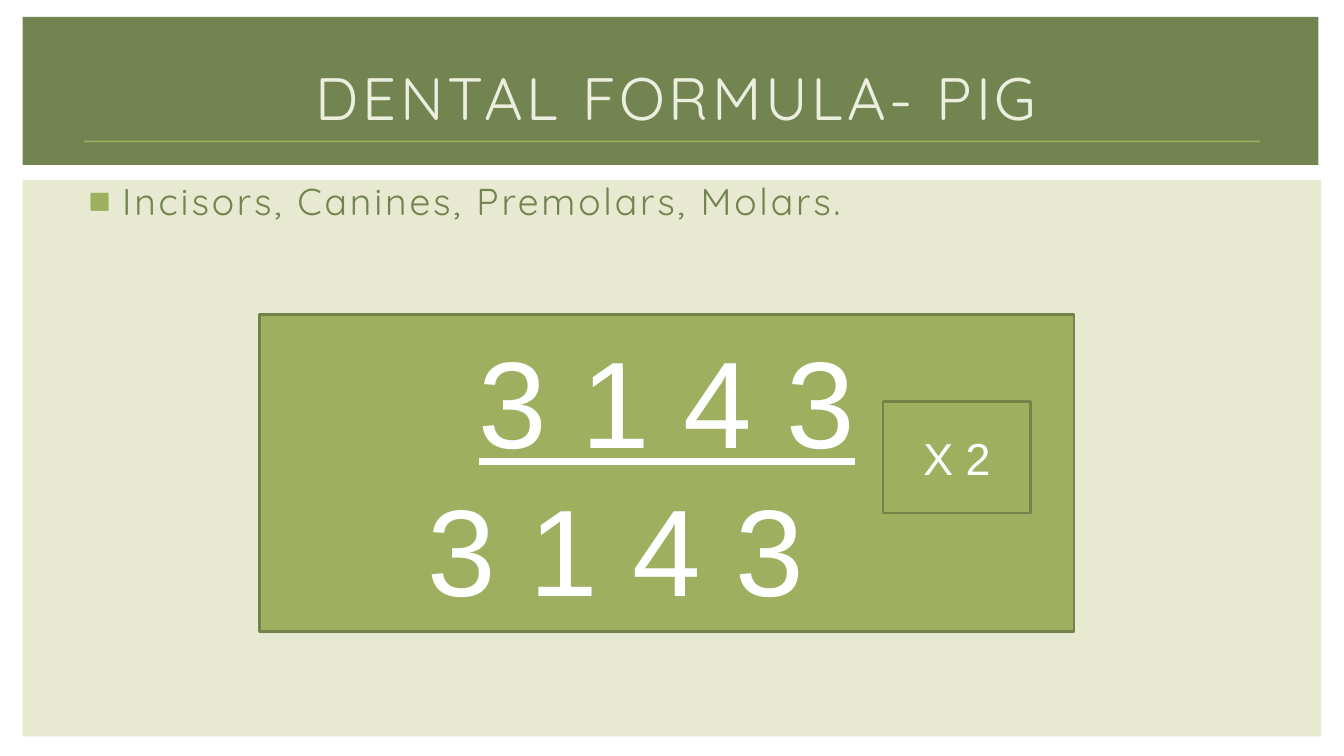
from dataclasses import dataclass

from lxml import etree
from pptx import Presentation
from pptx.dml.color import RGBColor
from pptx.enum.shapes import MSO_SHAPE
from pptx.enum.text import MSO_ANCHOR, PP_ALIGN
from pptx.oxml.ns import qn
from pptx.util import Cm, Pt

RECTANGLE = MSO_SHAPE.RECTANGLE
MIDDLE = MSO_ANCHOR.MIDDLE
TOP = MSO_ANCHOR.TOP
CENTER = PP_ALIGN.CENTER
LEFT = PP_ALIGN.LEFT


@dataclass(frozen=True)
class Theme:
    panel: str = "E8E9D1"
    band: str = "738450"
    accent: str = "9EB060"
    outline: str = "758247"
    title: str = "ECEFDF"
    white: str = "FFFFFF"
    heading_font: str = "Quicksand"
    formula_font: str = "Arial"
    title_size: int = 32
    body_size: int = 20
    formula_size: int = 66
    factor_size: int = 24
    outline_width: float = 1.5


THEME = Theme()


def add_rectangle(page, left, top, width, height, fill, line=None):
    box = page.shapes.add_shape(RECTANGLE, Cm(left), Cm(top), Cm(width), Cm(height))
    box.shadow.inherit = False
    box.fill.solid()
    box.fill.fore_color.rgb = RGBColor.from_string(fill)
    if line:
        box.line.color.rgb = RGBColor.from_string(line)
        box.line.width = Pt(THEME.outline_width)
    else:
        box.line.fill.background()
    return box


def write_text(box, text, font, size, color, align=CENTER, anchor=MIDDLE, spacing=0):
    """Fill a shape with text, one paragraph per line; spacing is in points."""
    frame = box.text_frame
    frame.word_wrap = True
    frame.vertical_anchor = anchor
    frame.text = text
    for para in frame.paragraphs:
        para.alignment = align
        for span in para.runs:
            span.font.name = font
            span.font.size = Pt(size)
            span.font.color.rgb = RGBColor.from_string(color)
            if spacing:
                span.font._element.set("spc", str(int(spacing * 100)))
    return frame.paragraphs


def add_heading_text(page, left, top, width, height, text, size, color, **layout):
    box = page.shapes.add_textbox(Cm(left), Cm(top), Cm(width), Cm(height))
    return write_text(box, text, THEME.heading_font, size, color, **layout)[0]


def set_margins(para, **margins):
    """Set paragraph margins (marL, marR, indent) given in centimetres."""
    properties = para._p.get_or_add_pPr()
    for name, length in margins.items():
        properties.set(name, str(int(Cm(length))))


def add_square_bullet(para, color):
    properties = para._p.get_or_add_pPr()
    bullet_color = etree.SubElement(properties, qn("a:buClr"))
    etree.SubElement(bullet_color, qn("a:srgbClr")).set("val", color)
    etree.SubElement(properties, qn("a:buFont")).set("typeface", THEME.formula_font)
    etree.SubElement(properties, qn("a:buChar")).set("char", "■")


def add_background(page):
    add_rectangle(page, 0.43, 3.4, 24.54, 10.52, THEME.panel)
    add_rectangle(page, 0.43, 0.32, 24.49, 2.8, THEME.band)
    add_rectangle(page, 1.59, 2.66, 22.22, 0.03, THEME.accent)


def add_formula(page):
    box = add_rectangle(page, 4.91, 5.95, 15.39, 5.99, THEME.accent, THEME.outline)
    upper, lower = write_text(box, "3 1 4 3\n3 1 4 3", THEME.formula_font,
                              THEME.formula_size, THEME.white)
    upper.runs[0].font.underline = True
    set_margins(lower, marR=1.94)

    factor = add_rectangle(page, 16.69, 7.59, 2.79, 2.11, THEME.accent, THEME.outline)
    write_text(factor, "X 2", THEME.formula_font, THEME.factor_size, THEME.white)


def main():
    deck = Presentation()
    deck.slide_width, deck.slide_height = Cm(25.4), Cm(14.29)
    page = deck.slides.add_slide(deck.slide_layouts[6])

    add_background(page)
    teeth = add_heading_text(page, 1.3, 3.25, 22.86, 8.69,
                             "Incisors, Canines, Premolars, Molars.",
                             THEME.body_size, THEME.band,
                             align=LEFT, anchor=TOP, spacing=1.5)
    set_margins(teeth, marL=0.76, indent=-0.64)
    add_square_bullet(teeth, THEME.accent)
    title = add_heading_text(page, 1.07, 0.74, 23.29, 2.18, "DENTAL FORMULA- PIG",
                             THEME.title_size, THEME.title, spacing=2)
    set_margins(title, marL=0.15)
    add_formula(page)

    deck.save("out.pptx")


if __name__ == "__main__":
    main()
